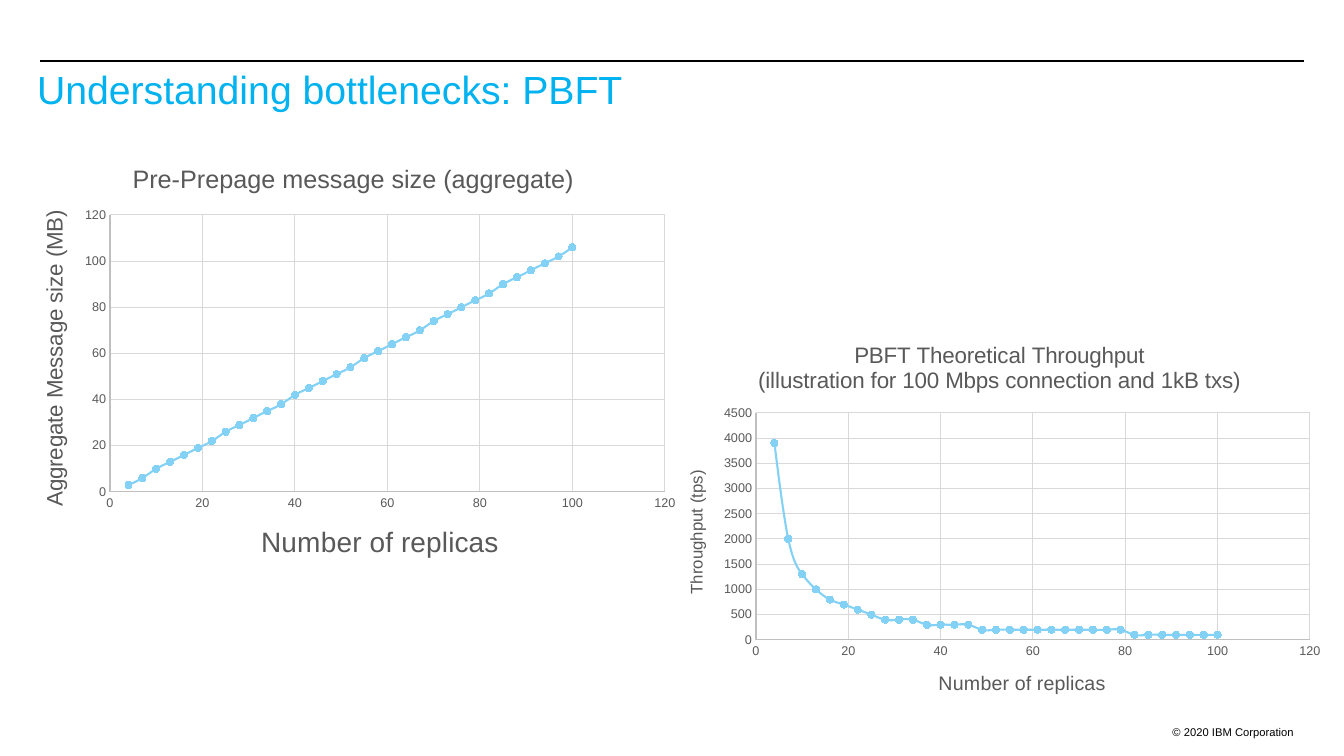
"""Build the slide on PBFT bottlenecks with two scatter charts."""
import pptx
import pptx.chart.data
import pptx.dml.color
import pptx.enum.chart
import pptx.enum.shapes
import pptx.enum.text
import pptx.oxml
import pptx.oxml.ns
import pptx.util

PX = 914400 / 100.8
Pt = pptx.util.Pt
GREY, GRID, AXIS, CURVE = "595959", "D9D9D9", "BFBFBF", "83D1F5"


def style(target, color, size=None):
    """Give a font a size and colour, or a line a width and colour."""
    fill = target.fill
    fill.solid()
    fill.fore_color.rgb = pptx.dml.color.RGBColor.from_string(color)
    if hasattr(target, "width"):
        target.width = Pt(size)
    elif size:
        target.name, target.bold = "Arial", False
        target.size = Pt(size)


def place(parent, index, frame, x, y, w=None, h=None):
    """Set a manual layout in a chart, from slide positions in px."""
    left, top, width, height = frame
    modes = '<c:xMode val="edge"/><c:yMode val="edge"/>'
    sizes = f'<c:x val="{(x - left) / width:.4f}"/><c:y val="{(y - top) / height:.4f}"/>'
    if w:
        modes = '<c:layoutTarget val="inner"/>' + modes
        sizes += f'<c:w val="{w / width:.4f}"/><c:h val="{h / height:.4f}"/>'
    for old in parent.findall(pptx.oxml.ns.qn("c:layout")):
        parent.remove(old)
    ns = pptx.oxml.ns.nsdecls("c")
    parent.insert(index, pptx.oxml.parse_xml(
        f"<c:layout {ns}><c:manualLayout>{modes}{sizes}</c:manualLayout></c:layout>"))


prs = pptx.Presentation()
prs.slide_width, prs.slide_height = round(1344 * PX), round(756 * PX)
s = prs.slides.add_slide(prs.slide_layouts[5])

rule = s.shapes.add_connector(pptx.enum.shapes.MSO_CONNECTOR.STRAIGHT,
                              *[round(v * PX) for v in (40, 61, 1304, 61)])
style(rule.line, "000000", 0.75)
rule._element.spPr.append(pptx.oxml.parse_xml(
    f'<a:effectLst {pptx.oxml.ns.nsdecls("a")}/>'))

title = s.shapes.title
footer = s.shapes.add_textbox(0, 0, 0, 0)
ALIGN = pptx.enum.text.PP_ALIGN
texts = [
    (title, (27, 66, 1277, 81), "Understanding bottlenecks: PBFT", "00B2EF", 28, ALIGN.LEFT, 0.9),
    (footer, (1102, 720, 202, 20), "© 2020 IBM Corporation", "000000", 8, ALIGN.RIGHT, 1.0),
]
for sp, box, text, color, size, align, spacing in texts:
    sp.left, sp.top, sp.width, sp.height = [round(v * PX) for v in box]
    tf = sp.text_frame
    tf.word_wrap = True
    tf.auto_size = pptx.enum.text.MSO_AUTO_SIZE.NONE
    tf.vertical_anchor = pptx.enum.text.MSO_ANCHOR.TOP
    p = tf.paragraphs[0]
    p.alignment, p.line_spacing = align, spacing
    r = p.add_run()
    r.text = text
    style(r.font, color, size)

replicas = range(4, 101, 3)
message_size = [round(3.2 * (n - 1) / 3) for n in replicas]
throughput = [int(117 / (n - 1) + 0.5) * 100 for n in replicas]

charts = [
    dict(frame=(19, 146, 668, 437), plot=(110, 215, 555, 277),
         values=message_size, top=120, step=20,
         title=(["Pre-Prepage message size (aggregate)"], 18, 128, 158),
         x_title=(["Number of replicas"], 20, 256, 519),
         y_title=(["Aggregate Message size (MB)"], 16, 36, 206)),
    dict(frame=(665, 327, 668, 391), plot=(756, 413, 554, 227),
         values=throughput, top=4500, step=500,
         title=(["PBFT Theoretical Throughput",
                 "(illustration for 100 Mbps connection and 1kB txs)"], 16, 755, 339),
         x_title=(["Number of replicas"], 14, 935, 667),
         y_title=(["Throughput (tps)"], 12, 683, 467)),
]
for c in charts:
    data = pptx.chart.data.XyChartData()
    points = data.add_series("Series 1")
    for n, value in zip(replicas, c["values"]):
        points.add_data_point(n, value)
    chart = s.shapes.add_chart(pptx.enum.chart.XL_CHART_TYPE.XY_SCATTER_SMOOTH,
                               *[round(v * PX) for v in c["frame"]], data).chart
    style(chart.font, "000000", 10)
    chart.has_legend = False
    place(chart._chartSpace.chart.plotArea, 0, c["frame"], *c["plot"])

    x_axis, y_axis = chart.category_axis, chart.value_axis
    for axis, top, step in ((x_axis, 120, 20), (y_axis, c["top"], c["step"])):
        axis.minimum_scale, axis.maximum_scale, axis.major_unit = 0, top, step
        axis.major_tick_mark = axis.minor_tick_mark = pptx.enum.chart.XL_TICK_MARK.NONE
        axis.has_major_gridlines = True
        style(axis.major_gridlines.format.line, GRID, 0.75)
        style(axis.format.line, AXIS, 0.75)
        style(axis.tick_labels.font, GREY, 9)

    chart.has_title = True
    headings = [(chart.chart_title, c["title"]), (x_axis.axis_title, c["x_title"]),
                (y_axis.axis_title, c["y_title"])]
    for heading, (lines, size, x, y) in headings:
        tf = heading.text_frame
        for i, line in enumerate(lines):
            p = tf.add_paragraph() if i else tf.paragraphs[0]
            style(p.font, GREY, size)
            r = p.add_run()
            r.text = line
            style(r.font, GREY, size)
        place(heading._element, 1, c["frame"], x, y)
    y_axis.axis_title.text_frame._txBody.bodyPr.set("rot", "-5400000")

    series = chart.plots[0].series[0]
    series._element.get_or_add_smooth().val = True
    style(series.format.line, CURVE, 1.5)
    marker = series.marker
    marker.style, marker.size = pptx.enum.chart.XL_MARKER_STYLE.CIRCLE, 5
    style(marker.format, CURVE)
    style(marker.format.line, CURVE, 0.75)

prs.save("out.pptx")
